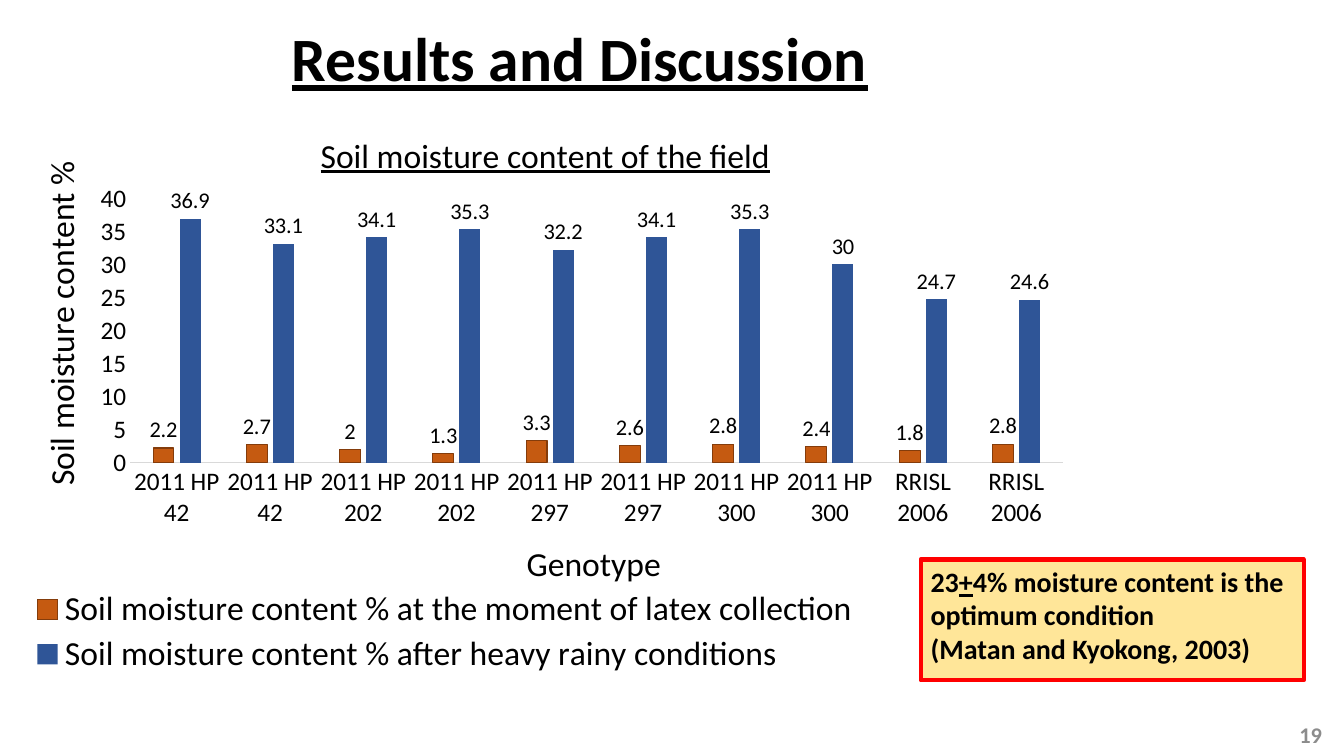
from dataclasses import dataclass

from lxml.etree import SubElement
from pptx import Presentation
from pptx.chart.data import CategoryChartData
from pptx.dml.color import RGBColor
from pptx.enum.chart import XL_CHART_TYPE, XL_LABEL_POSITION, XL_LEGEND_POSITION, XL_TICK_MARK
from pptx.enum.shapes import MSO_SHAPE
from pptx.enum.text import MSO_ANCHOR, PP_ALIGN
from pptx.oxml import parse_xml
from pptx.oxml.ns import nsdecls, qn
from pptx.util import Inches, Pt


@dataclass(frozen=True)
class Theme:
    face: str = "Calibri"
    ink: str = "000000"
    mute: str = "8C8C8C"
    axis: str = "D9D9D9"
    dry: str = "C55A11"
    edge: str = "843C0B"
    wet: str = "2F5597"
    note: str = "FFE699"
    frame: str = "FF0000"
    head: int = 44
    label: int = 24
    body: int = 20
    tick: int = 18
    small: int = 16


THEME = Theme()
WIDE, HIGH = 13.33, 7.5
FIELDS = ["2011 HP 42", "2011 HP 202", "2011 HP 297", "2011 HP 300", "RRISL 2006"]
DRY = [2.2, 2.7, 2, 1.3, 3.3, 2.6, 2.8, 2.4, 1.8, 2.8]
WET = [36.9, 33.1, 34.1, 35.3, 32.2, 34.1, 35.3, 30, 24.7, 24.6]


def tint(code):
    return RGBColor.from_string(code)


def style(font, size, color=THEME.ink, bold=False, under=False):
    font.name = THEME.face
    font.size = Pt(size)
    font.color.rgb = tint(color)
    font.bold = bold
    font.underline = under


def add_run(para, text, size, **look):
    run = para.add_run()
    run.text = text
    style(run.font, size, **look)


def share(box):
    left, top, width, height = box
    return (Inches(WIDE * left), Inches(HIGH * top),
            Inches(WIDE * width), Inches(HIGH * height))


def add_line(slide, box, text, size, align, **look):
    frame = slide.shapes.add_textbox(*share(box)).text_frame
    frame.word_wrap = True
    frame.vertical_anchor = MSO_ANCHOR.MIDDLE
    para = frame.paragraphs[0]
    para.alignment = align
    para.line_spacing = 0.9
    add_run(para, text, size, bold=True, **look)


def add_note(slide, box):
    note = slide.shapes.add_shape(MSO_SHAPE.RECTANGLE, *share(box))
    note.shadow.inherit = False
    note.fill.solid()
    note.fill.fore_color.rgb = tint(THEME.note)
    note.line.color.rgb = tint(THEME.frame)
    note.line.width = Pt(3)
    frame = note.text_frame
    frame.word_wrap = True
    frame.vertical_anchor = MSO_ANCHOR.TOP
    first, cite = frame.paragraphs[0], frame.add_paragraph()
    first.alignment = cite.alignment = PP_ALIGN.LEFT
    add_run(first, "23", THEME.body, bold=True)
    add_run(first, "+", THEME.body, bold=True, under=True)
    add_run(first, "4% moisture content is the optimum condition", THEME.body, bold=True)
    add_run(cite, "(Matan and Kyokong, 2003)", THEME.body, bold=True)


def place(part, spot, inner=False):
    layout = part.find(qn("c:layout"))
    if layout is None:
        layout = parse_xml(f"<c:layout {nsdecls('c')}/>")
        part.insert(0 if inner else 1, layout)
    manual = SubElement(layout, qn("c:manualLayout"))
    rules = [("layoutTarget", "inner")] if inner else []
    rules += [("xMode", "edge"), ("yMode", "edge")]
    rules += zip("xywh", spot)
    for name, value in rules:
        SubElement(manual, qn(f"c:{name}")).set("val", str(value))


def name_part(title, text, spot, under=False):
    add_run(title.text_frame.paragraphs[0], text, THEME.label, under=under)
    place(title._element, spot)


def style_axis(axis, text, spot):
    axis.has_major_gridlines = False
    axis.major_tick_mark = axis.minor_tick_mark = XL_TICK_MARK.NONE
    style(axis.tick_labels.font, THEME.tick)
    name_part(axis.axis_title, text, spot)


def add_bars(slide, box):
    data = CategoryChartData()
    data.categories = [field for field in FIELDS for _ in range(2)]
    data.add_series("Soil moisture content % at the moment of latex collection", DRY)
    data.add_series("Soil moisture content % after heavy rainy conditions", WET)
    chart = slide.shapes.add_chart(XL_CHART_TYPE.COLUMN_CLUSTERED, *share(box), data).chart
    style(chart.font, 10)
    chart.has_title = True
    name_part(chart.chart_title, "Soil moisture content of the field", (0.29, 0.04), under=True)

    names, scale = chart.category_axis, chart.value_axis
    style_axis(names, "Genotype", (0.48, 0.75))
    names.format.line.color.rgb = tint(THEME.axis)
    names.format.line.width = Pt(0.75)
    style_axis(scale, "Soil moisture content %", (0.03, 0.09))
    scale.axis_title.text_frame._txBody.bodyPr.set("rot", "-5400000")
    scale.format.line.fill.background()
    scale.minimum_scale, scale.maximum_scale, scale.major_unit = 0, 40, 5

    plot = chart.plots[0]
    plot.vary_by_categories = False
    plot.gap_width, plot.overlap = 219, -27
    for bars, color in zip(plot.series, (THEME.dry, THEME.wet)):
        bars.format.fill.solid()
        bars.format.fill.fore_color.rgb = tint(color)
        labels = bars.data_labels
        labels.show_value = True
        labels.position = XL_LABEL_POSITION.OUTSIDE_END
        style(labels.font, THEME.small)
    edge = plot.series[0].format.line
    edge.color.rgb = tint(THEME.edge)
    edge.width = Pt(0.75)
    place(chart._chartSpace.chart.plotArea, (0.12, 0.165, 0.86, 0.46), inner=True)

    chart.has_legend = True
    legend = chart.legend
    legend.position = XL_LEGEND_POSITION.BOTTOM
    legend.include_in_layout = False
    style(legend.font, THEME.label)
    place(legend._element, (0.02, 0.84, 0.78, 0.16))


def build_slide(deck):
    slide = deck.slides.add_slide(deck.slide_layouts[6])
    add_line(slide, (0, -0.015, 0.863, 0.193), "Results and Discussion",
             THEME.head, PP_ALIGN.CENTER, under=True)
    add_line(slide, (0.766, 0.947, 0.225, 0.053), "19",
             THEME.small, PP_ALIGN.RIGHT, color=THEME.mute)
    add_note(slide, (0.685, 0.74, 0.285, 0.16))
    add_bars(slide, (0, 0.137, 0.807, 0.76))


def main():
    deck = Presentation()
    deck.slide_width, deck.slide_height = Inches(WIDE), Inches(HIGH)
    build_slide(deck)
    deck.save("out.pptx")


if __name__ == "__main__":
    main()
